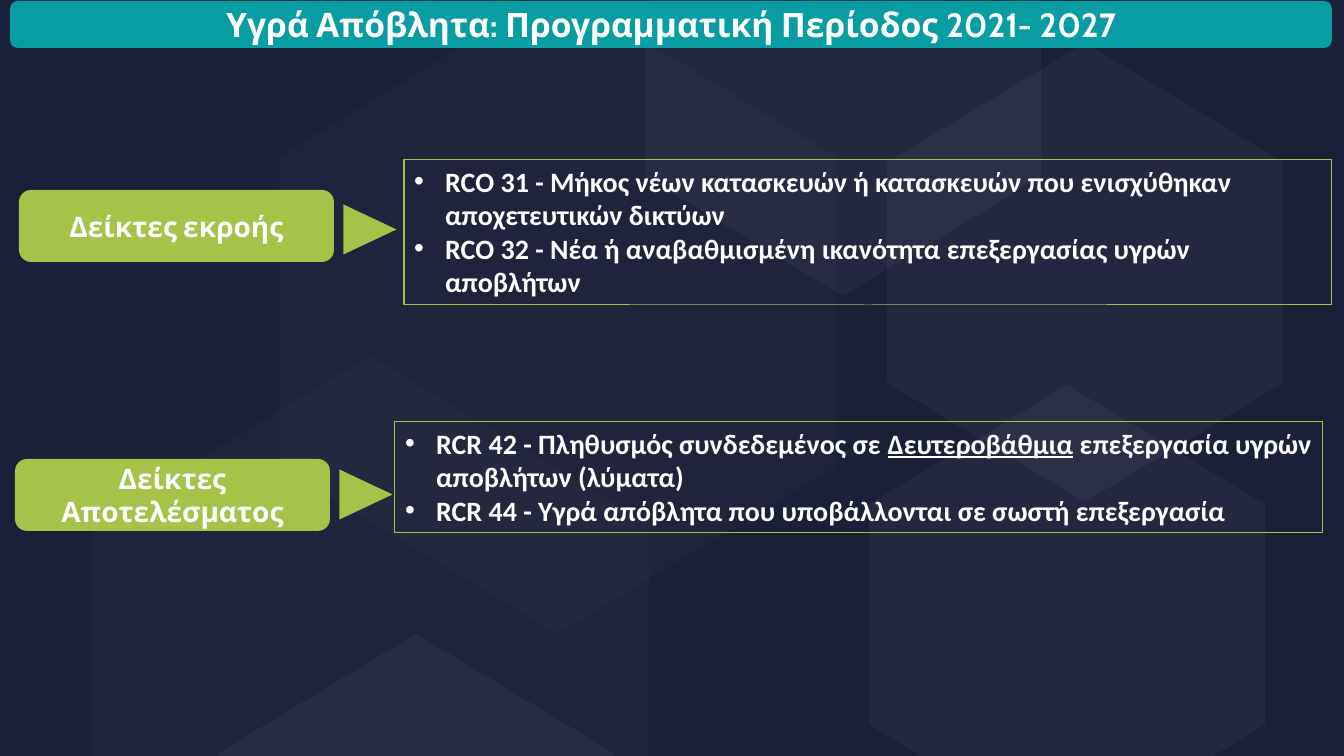
from dataclasses import dataclass

from lxml.etree import SubElement
from pptx import Presentation
from pptx.dml.color import RGBColor
from pptx.enum.shapes import MSO_SHAPE
from pptx.enum.text import MSO_ANCHOR, MSO_AUTO_SIZE, PP_ALIGN
from pptx.oxml.ns import qn
from pptx.util import Pt


@dataclass(frozen=True)
class Theme:
    night: str = "1B2039"
    teal: str = "089CA3"
    green: str = "A5C249"
    white: str = "FFFFFF"
    head: str = "Cabin"
    body: str = "Calibri"
    large: int = 24
    normal: int = 20
    border: float = 0.75


def px(count):
    """Turn pixels, 1344 to the slide width, into EMU."""
    return round(count * 12192000 / 1344)


class Board:
    def __init__(self, slide, theme):
        self.slide = slide
        self.theme = theme
        fill = slide.background.fill
        fill.solid()
        fill.fore_color.rgb = RGBColor.from_string(theme.night)

    def paint(self, shape, color):
        shape.shadow.inherit = False
        shape.fill.solid()
        shape.fill.fore_color.rgb = RGBColor.from_string(color)
        shape.line.fill.background()

    def style(self, para, face, size):
        font = para.font
        font.name, font.size, font.bold = face, Pt(size), True
        font.color.rgb = RGBColor.from_string(self.theme.white)

    def block(self, kind, box, color):
        shape = self.slide.shapes.add_shape(kind, *map(px, box))
        self.paint(shape, color)
        return shape

    def hexagon(self, left, top, wide, high, alpha):
        """Draw an upright hexagon, white at alpha percent."""
        mid, right, base = left + wide / 2, left + wide, top + high
        upper, lower = top + high * 0.26, top + high * 0.74
        points = [(mid, top), (right, upper), (right, lower),
                  (mid, base), (left, lower), (left, upper)]
        start, *rest = [(px(x), px(y)) for x, y in points]
        path = self.slide.shapes.build_freeform(*start)
        path.add_line_segments(rest)
        shape = path.convert_to_shape()
        self.paint(shape, self.theme.white)
        tint = shape._element.spPr.find(".//" + qn("a:srgbClr"))
        SubElement(tint, qn("a:alpha")).set("val", str(alpha * 1000))

    def place(self, holder, box):
        """Move a placeholder to the front and to its box."""
        self.slide.shapes._spTree.append(holder._element)
        holder.left, holder.top, holder.width, holder.height = map(px, box)
        frame = holder.text_frame
        frame.auto_size = MSO_AUTO_SIZE.NONE
        frame.word_wrap = True
        return frame

    def title(self, text, box):
        self.block(MSO_SHAPE.ROUNDED_RECTANGLE, box, self.theme.teal)
        frame = self.place(self.slide.shapes.title, box)
        frame.vertical_anchor = MSO_ANCHOR.MIDDLE
        frame.text = text
        para = frame.paragraphs[0]
        para.alignment = PP_ALIGN.CENTER
        self.style(para, self.theme.head, self.theme.large)

    def label(self, text, box):
        shape = self.block(MSO_SHAPE.ROUNDED_RECTANGLE, box, self.theme.green)
        frame = shape.text_frame
        frame.word_wrap = True
        frame.vertical_anchor = MSO_ANCHOR.MIDDLE
        frame.text = text
        para = frame.paragraphs[0]
        para.alignment = PP_ALIGN.CENTER
        self.style(para, self.theme.head, self.theme.normal)

    def arrow(self, box):
        shape = self.block(MSO_SHAPE.ISOSCELES_TRIANGLE, box, self.theme.green)
        shape.rotation = 90

    def bullets(self, holder, items, box):
        """Fill a framed list; each item is (text, underlined) runs."""
        frame = self.place(holder, box)
        frame.vertical_anchor = MSO_ANCHOR.TOP
        holder.line.color.rgb = RGBColor.from_string(self.theme.green)
        holder.line.width = Pt(self.theme.border)
        for i, runs in enumerate(items):
            para = frame.add_paragraph() if i else frame.paragraphs[0]
            props = para._p.get_or_add_pPr()
            props.set("marL", str(px(31)))
            props.set("indent", str(px(-31)))
            para.space_before = Pt(0)
            self.style(para, self.theme.body, self.theme.normal)
            for text, under in runs:
                run = para.add_run()
                run.text = text
                if under:
                    run.font.underline = True


SMALL = (396, 459, 4)
LARGE = (557, 645, 2)
HEXAGONS = [
    (869, 385, SMALL), (887, 43, SMALL), (279, -11, LARGE),
    (92, 356, LARGE), (645, -163, SMALL), (218, 634, SMALL),
]
OUTPUT = [
    [("RCO 31 - Μήκος νέων κατασκευών ή κατασκευών που ενισχύθηκαν "
      "αποχετευτικών δικτύων", False)],
    [("RCO 32 - Νέα ή αναβαθμισμένη ικανότητα επεξεργασίας υγρών "
      "αποβλήτων", False)],
]
RESULT = [
    [("RCR 42 - Πληθυσμός συνδεδεμένος σε ", False),
     ("Δευτεροβάθμια", True),
     (" επεξεργασία υγρών αποβλήτων (λύματα)", False)],
    [("RCR 44 - Υγρά απόβλητα που υποβάλλονται σε σωστή επεξεργασία", False)],
]
# label, label corner, arrow corner, list items, list box
GROUPS = [
    ("Δείκτες εκροής", (19, 190), (345, 203), OUTPUT, (404, 159, 928, 146)),
    ("Δείκτες Αποτελέσματος", (15, 459), (341, 468), RESULT,
     (395, 421, 928, 112)),
]


def main():
    deck = Presentation()
    deck.slide_width, deck.slide_height = px(1344), px(756)
    slide = deck.slides.add_slide(deck.slide_layouts[3])
    board = Board(slide, Theme())
    holders = list(slide.placeholders)[1:]

    for left, top, size in HEXAGONS:
        board.hexagon(left, top, *size)
    board.title("Υγρά Απόβλητα: Προγραμματική Περίοδος 2021- 2027",
                (10, 1, 1322, 47))
    for holder, (name, spot, tip, items, box) in zip(holders, GROUPS):
        board.label(name, (*spot, 315, 72))
        board.bullets(holder, items, box)
        board.arrow((*tip, 50, 53))
    deck.save("out.pptx")


if __name__ == "__main__":
    main()
